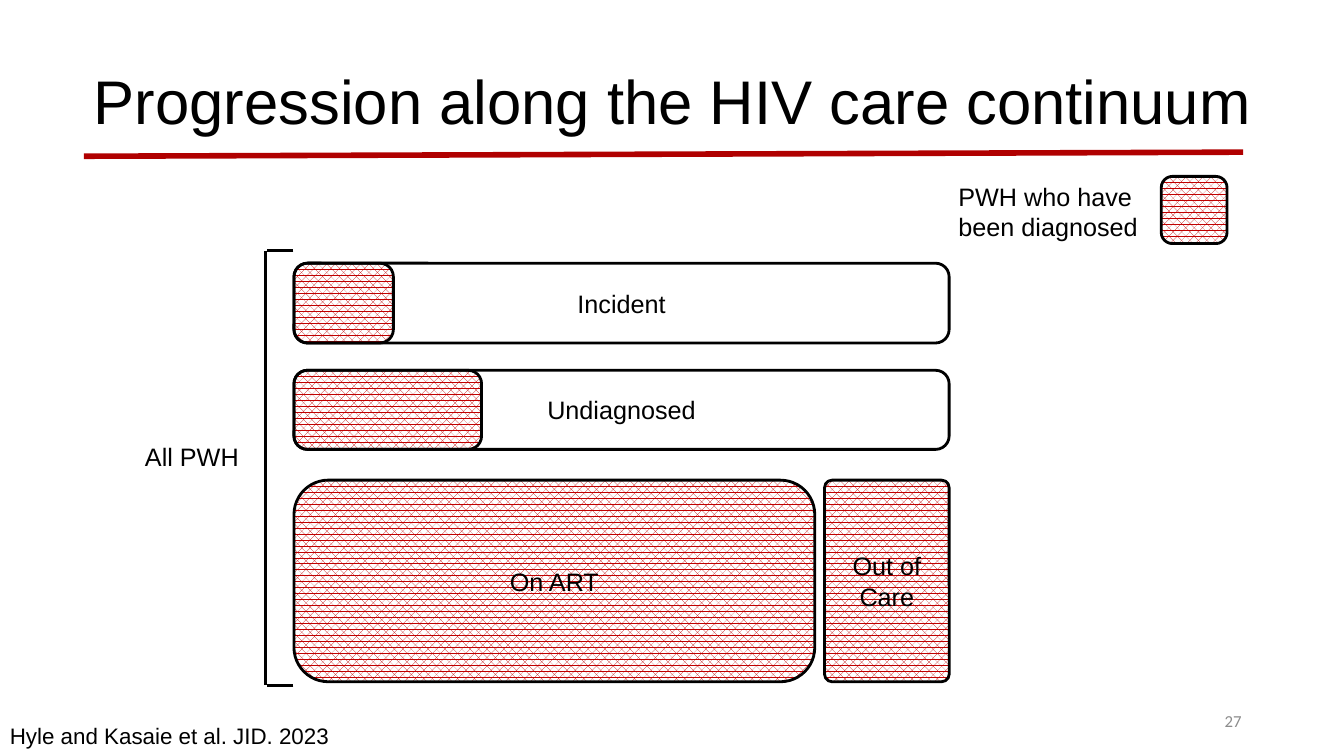
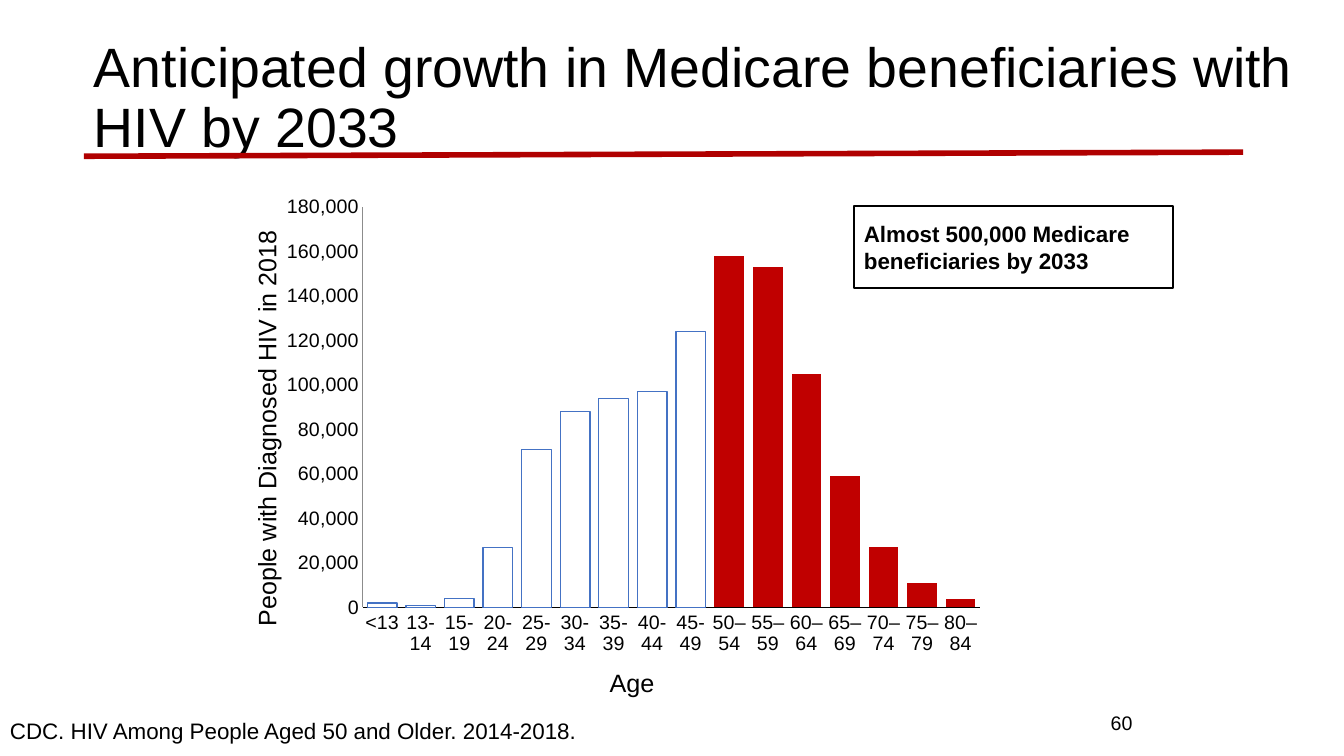
from lxml import etree
from pptx import Presentation
from pptx.chart.data import CategoryChartData
from pptx.dml.color import RGBColor
from pptx.enum import chart as charts, dml, shapes, text
from pptx.oxml.ns import qn
from pptx.util import Pt

BLACK = RGBColor(0x00, 0x00, 0x00)
WHITE = RGBColor(0xFF, 0xFF, 0xFF)
RULE_RED = RGBColor(0xB0, 0x00, 0x00)
RED = RGBColor(0xC0, 0x00, 0x00)
BLUE = RGBColor(0x44, 0x72, 0xC4)
GREY = RGBColor(0x8C, 0x8C, 0x8C)
LEFT, CENTER, RIGHT = text.PP_ALIGN.LEFT, text.PP_ALIGN.CENTER, text.PP_ALIGN.RIGHT
TOP, MIDDLE = text.MSO_ANCHOR.TOP, text.MSO_ANCHOR.MIDDLE


def write(shape, words, size=18, align=LEFT, anchor=TOP, color=BLACK,
          face="Arial", bold=False, spacing=1.0):
    frame = shape.text_frame
    frame.word_wrap = True
    frame.vertical_anchor = anchor
    frame.text = words
    for para in frame.paragraphs:
        para.alignment = align
        para.line_spacing = spacing
        for span in para.runs:
            span.font.size = Pt(size)
            span.font.name = face
            span.font.bold = bold
            span.font.color.rgb = color


def set_layout(layout, **values):
    """Fill a chart layout with fractions of the chart's size."""
    manual = etree.SubElement(layout, qn("c:manualLayout"))
    for name, value in values.items():
        etree.SubElement(manual, qn("c:" + name)).set("val", str(value))


deck = Presentation()
deck.slide_width, deck.slide_height = Pt(960), Pt(540)
blank = deck.slide_layouts[6]
continuum, growth = deck.slides.add_slide(blank), deck.slides.add_slide(blank)

# Text boxes: page, place, words, style
boxes = [
    (continuum, (60, 23, 871, 104), "Progression along the HIV care continuum",
     dict(size=44, anchor=MIDDLE, spacing=0.9)),
    (continuum, (678, 500.5, 216, 29), "27",
     dict(size=12, align=RIGHT, anchor=MIDDLE, color=GREY, face="Calibri")),
    (continuum, (96.5, 312, 91.5, 29), "All PWH", {}),
    (continuum, (677.5, 126, 150, 51), "PWH who have\nbeen diagnosed", {}),
    (continuum, (0, 512, 260, 27), "Hyle and Kasaie et al. JID. 2023", dict(size=16)),
    (growth, (60, 20, 876, 102),
     "Anticipated growth in Medicare beneficiaries with HIV by 2033",
     dict(size=39.6, anchor=MIDDLE, spacing=0.9)),
    (growth, (648, 504, 168, 37), "60", dict(size=14, align=RIGHT)),
    (growth, (0, 509, 469, 27),
     "CDC. HIV Among People Aged 50 and Older. 2014-2018.", dict(size=16)),
]
for page, place, words, style in boxes:
    write(page.shapes.add_textbox(*map(Pt, place)), words, **style)

# Title rules and the bracket around all PWH
rule = (60, 111.6, 888, 108.7)
lines = [
    (continuum, rule, RULE_RED, 4),
    (growth, rule, RULE_RED, 4),
    (continuum, (189.5, 179, 189.5, 489.5), BLACK, 2),
    (continuum, (209.5, 179, 190.5, 179), BLACK, 2),
    (continuum, (209.5, 489.5, 190.5, 489.5), BLACK, 2),
]
for page, ends, color, width in lines:
    line = page.shapes.add_connector(shapes.MSO_CONNECTOR.STRAIGHT, *map(Pt, ends))
    line.line.color.rgb = color
    line.line.width = Pt(width)
    etree.SubElement(line._element.spPr, qn("a:effectLst"))

# Care stages: place, label, whether diagnosed, corner radius
BAR_LEFT, BAR_WIDTH = 210, 468
stages = [
    ((BAR_LEFT, 188, 71, 57), "", True, 0.17),
    ((BAR_LEFT, 188, BAR_WIDTH, 57), "Incident", False, 0.17),
    ((BAR_LEFT, 264.5, 134, 56.5), "", True, 0.17),
    ((BAR_LEFT, 264.5, BAR_WIDTH, 56.5), "Undiagnosed", False, 0.17),
    ((BAR_LEFT, 343, 372, 144), "On ART", True, 0.17),
    ((589, 343, 89, 144), "Out of Care", True, 0.06),
    ((829.5, 126, 47, 48), "", True, 0.17),
]
for place, label, diagnosed, radius in stages:
    stage = continuum.shapes.add_shape(
        shapes.MSO_SHAPE.ROUNDED_RECTANGLE, *map(Pt, place))
    stage.shadow.inherit = False
    stage.adjustments[0] = radius
    stage.line.color.rgb = BLACK
    stage.line.width = Pt(2)
    if diagnosed:
        stage.fill.patterned()
        stage.fill.pattern = dml.MSO_PATTERN.PERCENT_60
        stage.fill.fore_color.rgb = RED
        stage.fill.back_color.rgb = WHITE
    else:
        stage.fill.background()
    if label:
        write(stage, label, align=CENTER, anchor=MIDDLE)

# Age chart
data = CategoryChartData(number_format="#,##0")
data.categories = ["<13", "13-14", "15-19", "20-24", "25-29", "30-34", "35-39",
                   "40-44", "45-49", "50–54", "55–59", "60–64", "65–69", "70–74",
                   "75–79", "80–84"]
people = [2000, 1000, 4000, 27000, 71000, 88000, 94000, 97000, 124000,
          158000, 153000, 105000, 59000, 27000, 11000, 4000]
data.add_series("Series 1", people)
chart = growth.shapes.add_chart(
    charts.XL_CHART_TYPE.COLUMN_CLUSTERED,
    Pt(170), Pt(108.7), Pt(558), Pt(395.3), data).chart
chart.has_legend = False
chart.has_title = False
chart.font.name = "Arial"
chart.font.size = Pt(14)
chart.font.color.rgb = BLACK

plot = chart.plots[0]
plot.gap_width = 30
plot.vary_by_categories = False
series = plot.series[0]
FIRST_OVER_50 = 9
for index in range(len(people)):
    bar = series.points[index].format
    if index < FIRST_OVER_50:
        bar.fill.background()
        bar.line.color.rgb = BLUE
        bar.line.width = Pt(1)
    else:
        bar.fill.solid()
        bar.fill.fore_color.rgb = RED
        bar.line.fill.background()

ages, counts = chart.category_axis, chart.value_axis
counts.minimum_scale, counts.maximum_scale, counts.major_unit = 0, 180000, 20000
counts.tick_labels.number_format = "#,##0"
counts.tick_labels.number_format_is_linked = False
axes = [
    (ages, "Age", BLACK, 0, 0.47, 0.93),
    (counts, "People with Diagnosed HIV in 2018", GREY, -90, 0.01, 0.14),
]
for axis, words, color, angle, x, y in axes:
    axis.has_major_gridlines = False
    axis.major_tick_mark = charts.XL_TICK_MARK.NONE
    axis.format.line.color.rgb = color
    axis.format.line.width = Pt(0.75)
    title = axis.axis_title
    title.text_frame.text = words
    font = title.text_frame.paragraphs[0].runs[0].font
    font.size, font.name, font.bold = Pt(18), "Arial", False
    font.color.rgb = BLACK
    title._element.find(".//" + qn("a:bodyPr")).set("rot", str(angle * 60000))
    set_layout(title._element.find(qn("c:layout")),
               xMode="edge", yMode="edge", x=x, y=y)

area = chart._chartSpace.find(".//" + qn("c:plotArea"))
for layout in area.findall(qn("c:layout")):
    area.remove(layout)
layout = etree.Element(qn("c:layout"))
area.insert(0, layout)
set_layout(layout, layoutTarget="inner", xMode="edge", yMode="edge",
           x=0.16, y=0.1, w=0.79, h=0.73)

callout = growth.shapes.add_shape(
    shapes.MSO_SHAPE.RECTANGLE, Pt(610), Pt(147.5), Pt(228), Pt(58.5))
callout.shadow.inherit = False
callout.fill.background()
callout.line.color.rgb = BLACK
callout.line.width = Pt(1.5)
write(callout, "Almost 500,000 Medicare beneficiaries by 2033",
      size=16, anchor=MIDDLE, bold=True)

deck.save("out.pptx")
